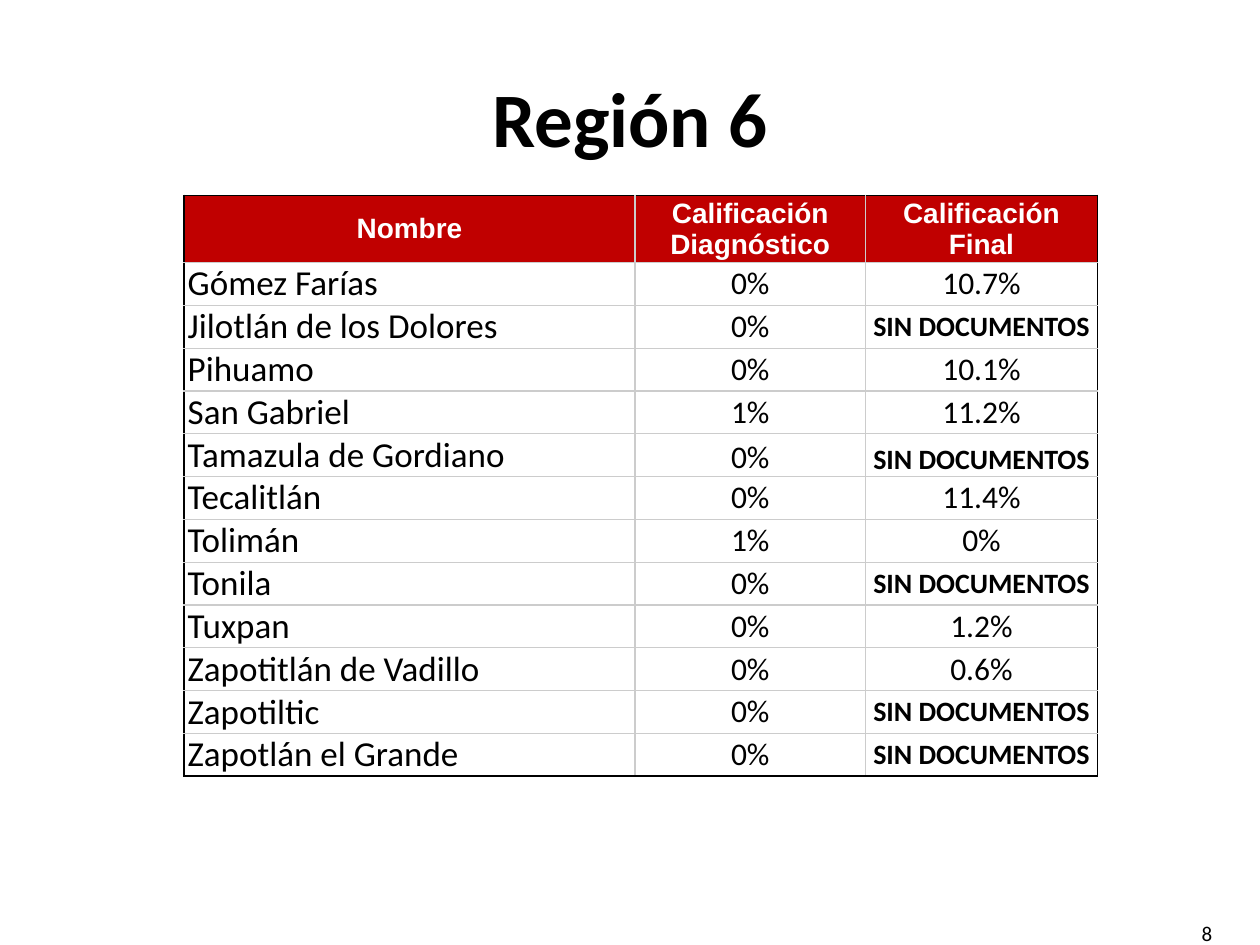
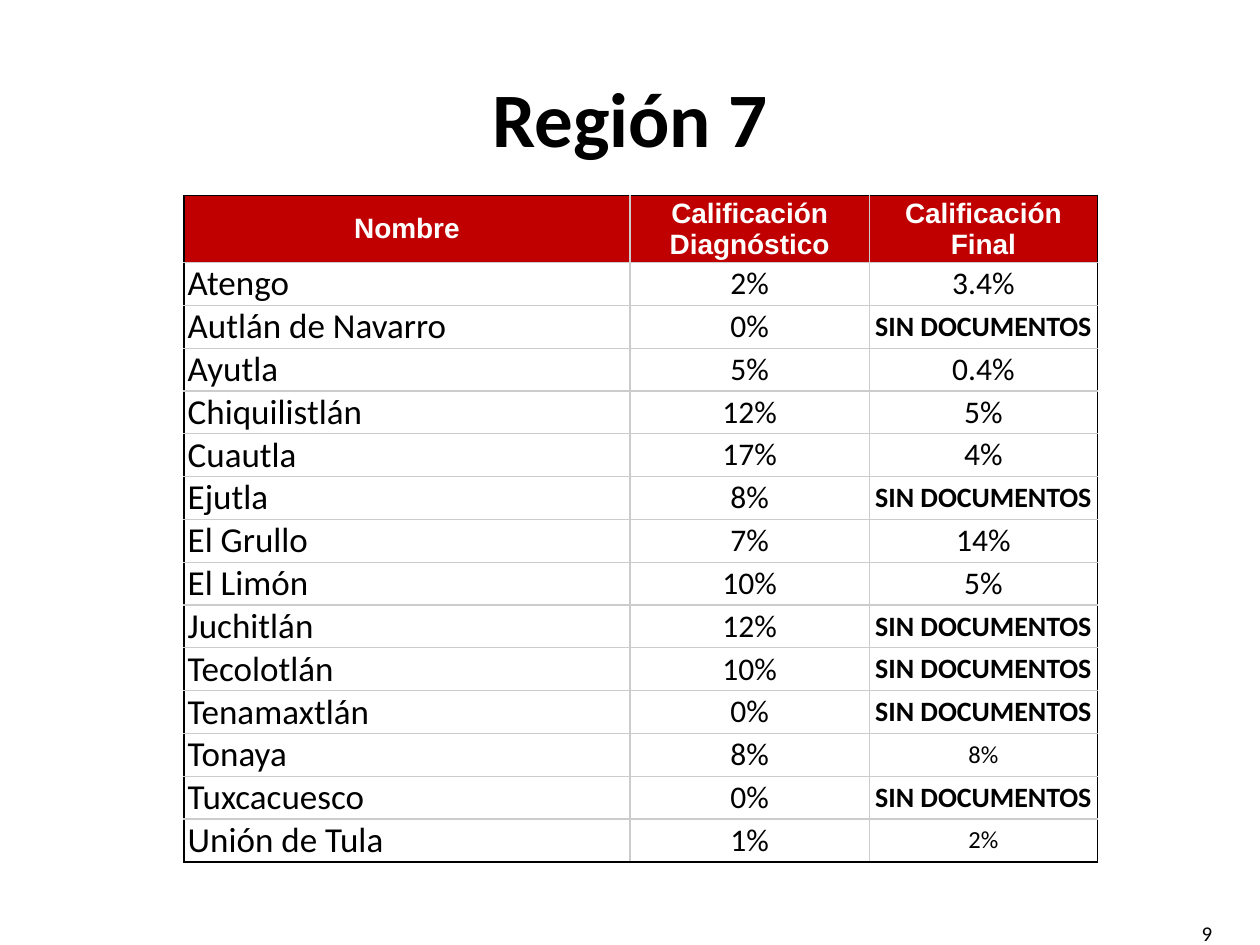
import pptx
import pptx.dml.color
import pptx.enum.text
import pptx.oxml
import pptx.oxml.ns
import pptx.util

Inches = pptx.util.Inches
Pt = pptx.util.Pt
ALIGN = pptx.enum.text.PP_ALIGN
ANCHOR = pptx.enum.text.MSO_ANCHOR

COLORS = {"ink": "000000", "paper": "FFFFFF", "header": "C00000", "grid": "CCCCCC"}
TITLE_BOX = (0.5, 0.3, 9, 1.25)
NUMBER_BOX = (7.39, 7.21, 2.33, 0.4)
TABLE_CORNER = (1.46, 1.55)
HEADER_HEIGHT = 0.49
ROW_HEIGHT = 0.34
HEADINGS = ("Nombre", "Calificación Diagnóstico", "Calificación Final")
MISSING = "SIN DOCUMENTOS"

REGIONS = [
    {
        "title": "Región 6",
        "number": 8,
        "widths": (3.58, 1.83, 1.84),
        "low_rows": {"Tamazula de Gordiano"},
        "small_finals": set(),
        "towns": [
            ("Gómez Farías", "0%", "10.7%"),
            ("Jilotlán de los Dolores", "0%", MISSING),
            ("Pihuamo", "0%", "10.1%"),
            ("San Gabriel", "1%", "11.2%"),
            ("Tamazula de Gordiano", "0%", MISSING),
            ("Tecalitlán", "0%", "11.4%"),
            ("Tolimán", "1%", "0%"),
            ("Tonila", "0%", MISSING),
            ("Tuxpan", "0%", "1.2%"),
            ("Zapotitlán de Vadillo", "0%", "0.6%"),
            ("Zapotiltic", "0%", MISSING),
            ("Zapotlán el Grande", "0%", MISSING),
        ],
    },
    {
        "title": "Región 7",
        "number": 9,
        "widths": (3.54, 1.9, 1.81),
        "low_rows": set(),
        "small_finals": {"Tonaya", "Unión de Tula"},
        "towns": [
            ("Atengo", "2%", "3.4%"),
            ("Autlán de Navarro", "0%", MISSING),
            ("Ayutla", "5%", "0.4%"),
            ("Chiquilistlán", "12%", "5%"),
            ("Cuautla", "17%", "4%"),
            ("Ejutla", "8%", MISSING),
            ("El Grullo", "7%", "14%"),
            ("El Limón", "10%", "5%"),
            ("Juchitlán", "12%", MISSING),
            ("Tecolotlán", "10%", MISSING),
            ("Tenamaxtlán", "0%", MISSING),
            ("Tonaya", "8%", "8%"),
            ("Tuxcacuesco", "0%", MISSING),
            ("Unión de Tula", "1%", "2%"),
        ],
    },
]


def rgb(name):
    return pptx.dml.color.RGBColor.from_string(COLORS[name])


def write_text(frame, text, size, font="Calibri", color="ink", bold=False, align=ALIGN.CENTER):
    para = frame.paragraphs[0]
    para.alignment = align
    span = para.add_run()
    span.text = text
    span.font.name = font
    span.font.size = Pt(size)
    span.font.bold = bold
    span.font.color.rgb = rgb(color)


def set_borders(cell, outer_sides):
    properties = cell._tc.get_or_add_tcPr()
    for position, side in enumerate("LRTB"):
        outer = side in outer_sides
        color = COLORS["ink" if outer else "grid"]
        width = Pt(1 if outer else 0.75)
        line = pptx.oxml.parse_xml(
            f'<a:ln{side} {pptx.oxml.ns.nsdecls("a")} w="{width}"><a:solidFill>'
            f'<a:srgbClr val="{color}"/></a:solidFill></a:ln{side}>'
        )
        properties.insert(position, line)


def outer_sides(row, column, last_row):
    edges = {"L": column == 0, "R": column == 2, "T": row == 0, "B": row == last_row}
    return {side for side, outer in edges.items() if outer}


def cell_format(row, column, text, small):
    if row == 0:
        return {"size": 16, "font": "Arial", "color": "paper", "bold": True}
    if column == 0:
        return {"size": 20, "align": ALIGN.LEFT}
    if text == MISSING:
        return {"size": 16, "bold": True}
    return {"size": 14 if small and column == 2 else 18}


def add_title(page, text, box):
    title = page.shapes.title
    title.left, title.top, title.width, title.height = map(Inches, box)
    title.text_frame.vertical_anchor = ANCHOR.MIDDLE
    write_text(title.text_frame, text, size=44, bold=True)


def add_page_number(page, number, box):
    frame = page.shapes.add_textbox(*map(Inches, box)).text_frame
    frame.word_wrap = True
    frame.vertical_anchor = ANCHOR.MIDDLE
    write_text(frame, str(number), size=12, align=ALIGN.RIGHT)


def add_scores(page, region, corner):
    rows = [HEADINGS, *region["towns"]]
    heights = [HEADER_HEIGHT] + [ROW_HEIGHT] * len(region["towns"])
    size = (sum(region["widths"]), sum(heights))
    table = page.shapes.add_table(len(rows), len(HEADINGS), *map(Inches, corner + size)).table
    table.first_row = table.horz_banding = False
    for column, width in zip(table.columns, region["widths"]):
        column.width = Inches(width)
    for row, (values, height) in enumerate(zip(rows, heights)):
        table.rows[row].height = Inches(height)
        town = values[0]
        for column, text in enumerate(values):
            cell = table.cell(row, column)
            cell.margin_left = cell.margin_right = Inches(0.03)
            cell.margin_top = cell.margin_bottom = 0
            cell.vertical_anchor = ANCHOR.BOTTOM if town in region["low_rows"] else ANCHOR.MIDDLE
            cell.fill.solid()
            cell.fill.fore_color.rgb = rgb("paper" if row else "header")
            set_borders(cell, outer_sides(row, column, len(rows) - 1))
            style = cell_format(row, column, text, town in region["small_finals"])
            write_text(cell.text_frame, text, **style)


def add_region_page(deck, region):
    page = deck.slides.add_slide(deck.slide_layouts.get_by_name("Title Only"))
    add_page_number(page, region["number"], NUMBER_BOX)
    add_scores(page, region, TABLE_CORNER)
    add_title(page, region["title"], TITLE_BOX)


def main():
    deck = pptx.Presentation()
    deck.slide_width = Inches(10)
    deck.slide_height = Inches(7.5)
    for region in REGIONS:
        add_region_page(deck, region)
    deck.save("out.pptx")


if __name__ == "__main__":
    main()
